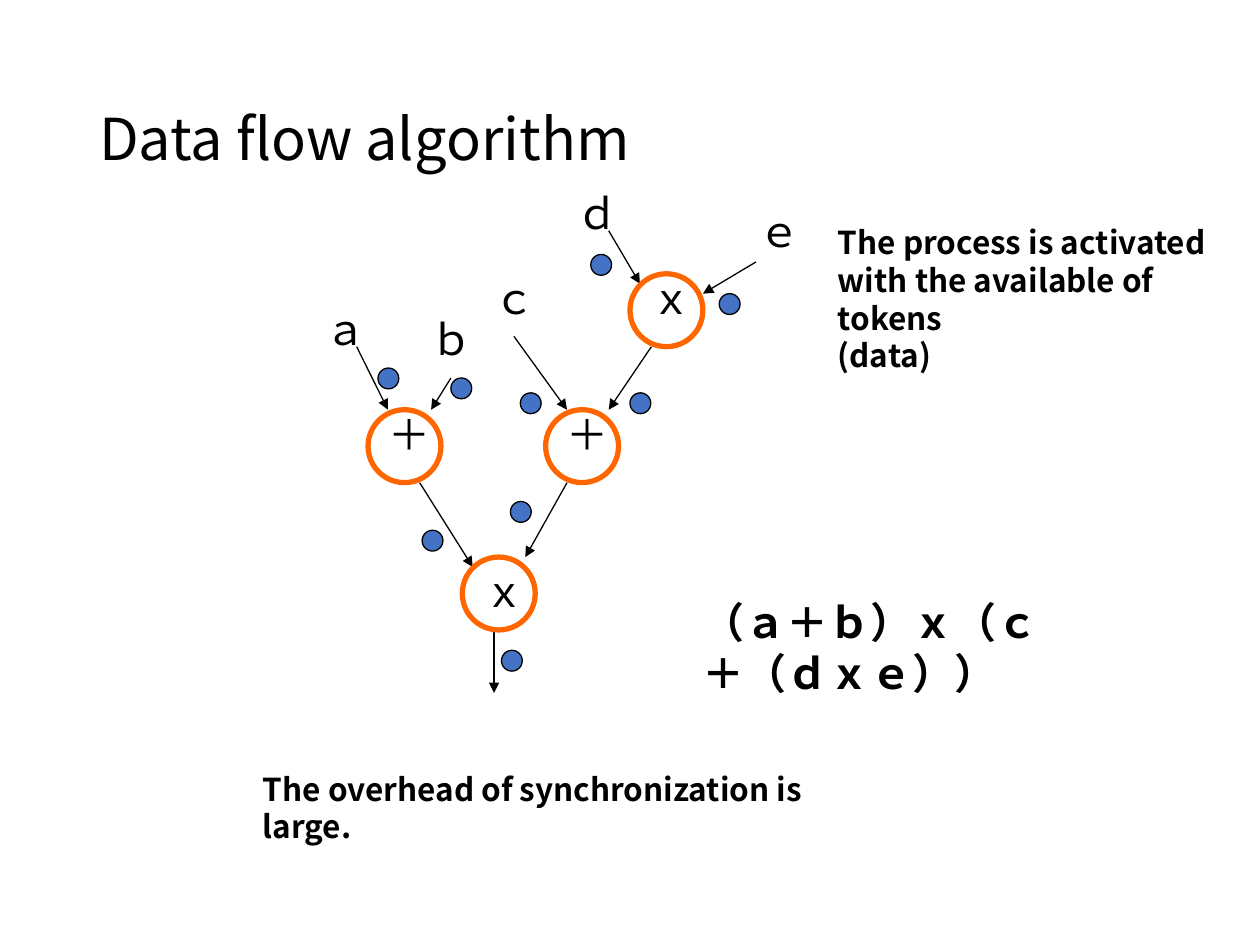
from dataclasses import dataclass

from lxml import etree
from pptx import Presentation
from pptx import util as u
from pptx.dml.color import RGBColor
from pptx.enum import shapes, text
from pptx.oxml import ns


@dataclass(frozen=True)
class Theme:
    ink: RGBColor = RGBColor(0x00, 0x00, 0x00)
    token: RGBColor = RGBColor(0x44, 0x72, 0xC4)
    ring: RGBColor = RGBColor(0xFF, 0x66, 0x00)
    sans: str = "Noto Sans CJK JP"
    serif: str = "Times New Roman"
    title_size: int = 33
    symbol_size: int = 24
    note_size: int = 18
    thin: float = 0.75
    outline: float = 2.25
    ring_width: float = 3


THEME = Theme()
NODE = 1.47
TOKEN = 0.42

NODES = [
    ("＋", 7.42, 8.26, -0.15),
    ("＋", 11, 8.26, -0.15),
    ("ｘ", 9.32, 11.23, 0.05),
    ("ｘ", 12.7, 5.52, -0.15),
]
INPUTS = [
    ("ａ", 6.3, 5.99),
    ("ｂ", 8.43, 6.2),
    ("ｃ", 9.7, 5.36),
    ("ｄ", 11.38, 3.66),
    ("ｅ", 15.04, 4.01),
]
ARROWS = [
    (7.19, 6.99, 7.82, 8.26),
    (9.09, 7.62, 8.69, 8.26),
    (10.36, 6.78, 11.43, 8.26),
    (12.27, 4.65, 12.9, 5.72),
    (15.24, 5.28, 14.17, 5.92),
    (13.13, 6.99, 12.27, 8.26),
    (8.46, 9.73, 9.53, 11.43),
    (11.43, 9.73, 10.59, 11.23),
    (9.96, 12.7, 9.96, 13.97),
]
TOKENS = [
    (7.62, 7.42), (9.09, 7.62), (10.49, 7.92),
    (11.91, 5.13), (14.5, 5.92), (12.7, 7.92),
    (8.51, 10.69), (10.29, 10.11), (10.11, 13.11),
]


def add_text(s, lines, box, size, font, bold=False):
    sp = s.shapes.add_textbox(*map(u.Cm, box))
    tf = sp.text_frame
    tf.word_wrap = True
    for i, line in enumerate(lines):
        p = tf.add_paragraph() if i else tf.paragraphs[0]
        r = p.add_run()
        r.text = line
        r.font.size = u.Pt(size)
        r.font.name = font
        r.font.bold = bold
        r.font.color.rgb = THEME.ink
        ea = etree.SubElement(r.font._element, ns.qn("a:ea"))
        ea.set("typeface", THEME.sans)
    return tf


def add_title(s, line):
    box = (1.75, 1.02, 21.9, 3.68)
    tf = add_text(s, [line], box, THEME.title_size, THEME.sans)
    tf.vertical_anchor = text.MSO_ANCHOR.MIDDLE
    tf.paragraphs[0].line_spacing = 0.9


def add_symbol(s, symbol, x, y):
    add_text(s, [symbol], (x, y, 1, 1.27), THEME.symbol_size, THEME.serif)


def add_circle(s, x, y, size, color, width, fill=None):
    sp = s.shapes.add_shape(shapes.MSO_SHAPE.OVAL, *map(u.Cm, (x, y, size, size)))
    sp.shadow.inherit = False
    sp.line.color.rgb = color
    sp.line.width = u.Pt(width)
    if fill is None:
        sp.fill.background()
    else:
        sp.fill.solid()
        sp.fill.fore_color.rgb = fill


def add_node(s, symbol, x, y, dy):
    add_circle(s, x, y, NODE, THEME.ink, THEME.outline)
    add_symbol(s, symbol, x + 0.17, y + dy)
    add_circle(s, x, y, NODE, THEME.ring, THEME.ring_width)


def add_arrow(s, ends):
    sp = s.shapes.add_connector(shapes.MSO_CONNECTOR.STRAIGHT, *map(u.Cm, ends))
    sp.line.color.rgb = THEME.ink
    sp.line.width = u.Pt(THEME.thin)
    etree.SubElement(sp.line._get_or_add_ln(), ns.qn("a:tailEnd")).set("type", "triangle")
    etree.SubElement(sp._element.spPr, ns.qn("a:effectLst"))


def main():
    prs = Presentation()
    prs.slide_width, prs.slide_height = u.Cm(25.4), u.Cm(19.05)
    s = prs.slides.add_slide(prs.slide_layouts[6])

    add_title(s, "Data flow algorithm")
    for ends in ARROWS:
        add_arrow(s, ends)
    for node in NODES:
        add_node(s, *node)
    for label in INPUTS:
        add_symbol(s, *label)
    for x, y in TOKENS:
        add_circle(s, x, y, TOKEN, THEME.ink, THEME.thin, THEME.token)

    add_text(s, ["（ａ＋ｂ）ｘ（ｃ＋（ｄｘｅ））"], (13.92, 11.91, 8.08, 1.27),
             THEME.symbol_size, THEME.serif, bold=True)
    add_text(s, ["The process is activated", "with the available of tokens", "(data)"],
             (16.64, 4.37, 8.76, 2.54), THEME.note_size, THEME.sans, bold=True)
    add_text(s, ["The overhead of synchronization is large."],
             (5.05, 15.39, 13.03, 1.02), THEME.note_size, THEME.sans, bold=True)

    prs.save("out.pptx")


if __name__ == "__main__":
    main()
